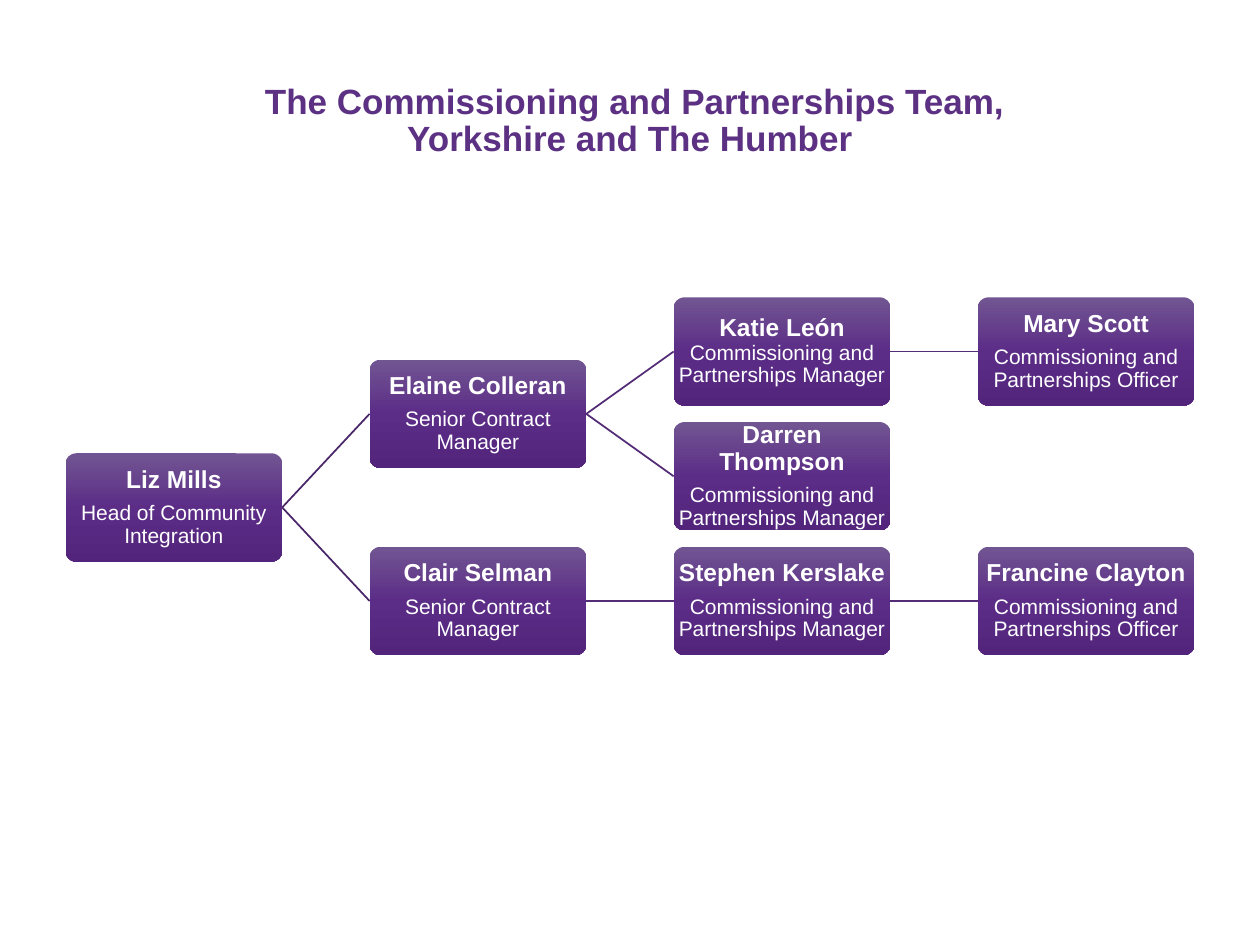
from copy import deepcopy

from pptx import Presentation
from pptx.dml.color import RGBColor
from pptx.enum.shapes import MSO_CONNECTOR, MSO_SHAPE
from pptx.enum.text import MSO_ANCHOR, PP_ALIGN
from pptx.oxml.ns import qn
from pptx.util import Inches, Pt

STRAIGHT = MSO_CONNECTOR.STRAIGHT
ROUNDED = MSO_SHAPE.ROUNDED_RECTANGLE
MIDDLE = MSO_ANCHOR.MIDDLE
CENTER = PP_ALIGN.CENTER

TITLE = " The Commissioning and Partnerships Team,\vYorkshire and The Humber"
HEAD = "Head of Community Integration"
SENIOR = "Senior Contract Manager"
MANAGER = "Commissioning and Partnerships Manager"
OFFICER = "Commissioning and Partnerships Officer"

# name, role, column, row, line manager
TEAM = [
    ("Liz Mills", HEAD, 0, 1.25, None),
    ("Elaine Colleran", SENIOR, 1, 0.5, "Liz Mills"),
    ("Katie León ", MANAGER, 2, 0, "Elaine Colleran"),
    ("Mary Scott", OFFICER, 3, 0, "Katie León "),
    ("Darren Thompson", MANAGER, 2, 1, "Elaine Colleran"),
    ("Clair Selman", SENIOR, 1, 2, "Liz Mills"),
    ("Stephen Kerslake", MANAGER, 2, 2, "Clair Selman"),
    ("Francine Clayton", OFFICER, 3, 2, "Stephen Kerslake"),
]
ROLE_ON_SAME_PARAGRAPH = {"Katie León "}

LEFT, RIGHT, TOP = 0.52, 9.48, 2.36
CARD_W, CARD_H, ROW_STEP = 1.72, 0.86, 0.99
COLUMN_STEP = (RIGHT - LEFT - CARD_W) / 3
GRADIENT = [(0, "715592"), (0.5, "5C2D87"), (1, "52247C")]
LINE_COLORS = {1: "4A2769", 2: "532C77", 3: "532C77"}
TITLE_FONT = {"name": "Arial", "size": Pt(20), "bold": True}
NAME_FONT = {"name": "Arial", "size": Pt(14), "bold": True}
ROLE_FONT = {"name": "Arial", "size": Pt(12), "bold": False}
TITLE_FRAME = {"vertical_anchor": MIDDLE, "word_wrap": True, "margin_left": 0,
               "margin_right": 0, "margin_top": 0, "margin_bottom": 0}
CARD_FRAME = TITLE_FRAME | {"margin_left": Inches(0.01), "margin_right": Inches(0.01)}
PARAGRAPH = {"alignment": CENTER, "line_spacing": 0.9, "space_before": 0}


def apply(target, values):
    for key, value in values.items():
        setattr(target, key, value)


def paint(color_format, color):
    color_format.rgb = RGBColor.from_string(color)


def add_text(paragraph, text, font_values):
    run = paragraph.add_run()
    run.text = text
    apply(run.font, font_values)
    paint(run.font.color, "FFFFFF")


def fill_gradient(shape):
    shape.fill.gradient()
    shape.fill.gradient_angle = 270
    stop_list = shape._element.spPr.find(qn("a:gradFill")).find(qn("a:gsLst"))
    stop_list.append(deepcopy(stop_list[-1]))
    for stop, (position, color) in zip(shape.fill.gradient_stops, GRADIENT):
        stop.position = position
        paint(stop.color, color)


def add_card(slide, name, role, column, row):
    left, top = LEFT + column * COLUMN_STEP, TOP + row * ROW_STEP
    card = slide.shapes.add_shape(
        ROUNDED, Inches(left), Inches(top), Inches(CARD_W), Inches(CARD_H))
    card.adjustments[0] = 0.1
    card.shadow.inherit = False
    card.line.fill.background()
    fill_gradient(card)
    frame = card.text_frame
    apply(frame, CARD_FRAME)
    name_line = role_line = frame.paragraphs[0]
    if name not in ROLE_ON_SAME_PARAGRAPH:
        role_line = frame.add_paragraph()
        name_line.space_after = Pt(5)
    add_text(name_line, name, NAME_FONT)
    add_text(role_line, role, ROLE_FONT)
    for paragraph in frame.paragraphs:
        apply(paragraph, PARAGRAPH)
    return card


def add_link(slide, manager, report, color):
    link = slide.shapes.add_connector(STRAIGHT, 0, 0, 0, 0)
    link.begin_connect(manager, 3)
    link.end_connect(report, 1)
    paint(link.line.color, color)
    link.line.width = Pt(1)
    properties = link._element.spPr
    properties.append(properties.makeelement(qn("a:effectLst"), {}))


def main():
    deck = Presentation()
    deck.slide_width, deck.slide_height = Inches(10), Inches(7.5)
    slide = deck.slides.add_slide(deck.slide_layouts[5])
    title = slide.shapes.title
    apply(title, {"left": Inches(0.51), "top": Inches(0.3),
                  "width": Inches(8.98), "height": Inches(1.33)})
    title.text_frame.text = TITLE
    apply(title.text_frame, TITLE_FRAME)
    heading = title.text_frame.paragraphs[0]
    apply(heading, PARAGRAPH)
    for run in heading.runs:
        apply(run.font, TITLE_FONT)
        paint(run.font.color, "5C3183")

    cards = {}
    for name, role, column, row, manager in TEAM:
        cards[name] = add_card(slide, name, role, column, row)
        if manager:
            add_link(slide, cards[manager], cards[name], LINE_COLORS[column])
    deck.save("out.pptx")


if __name__ == "__main__":
    main()
